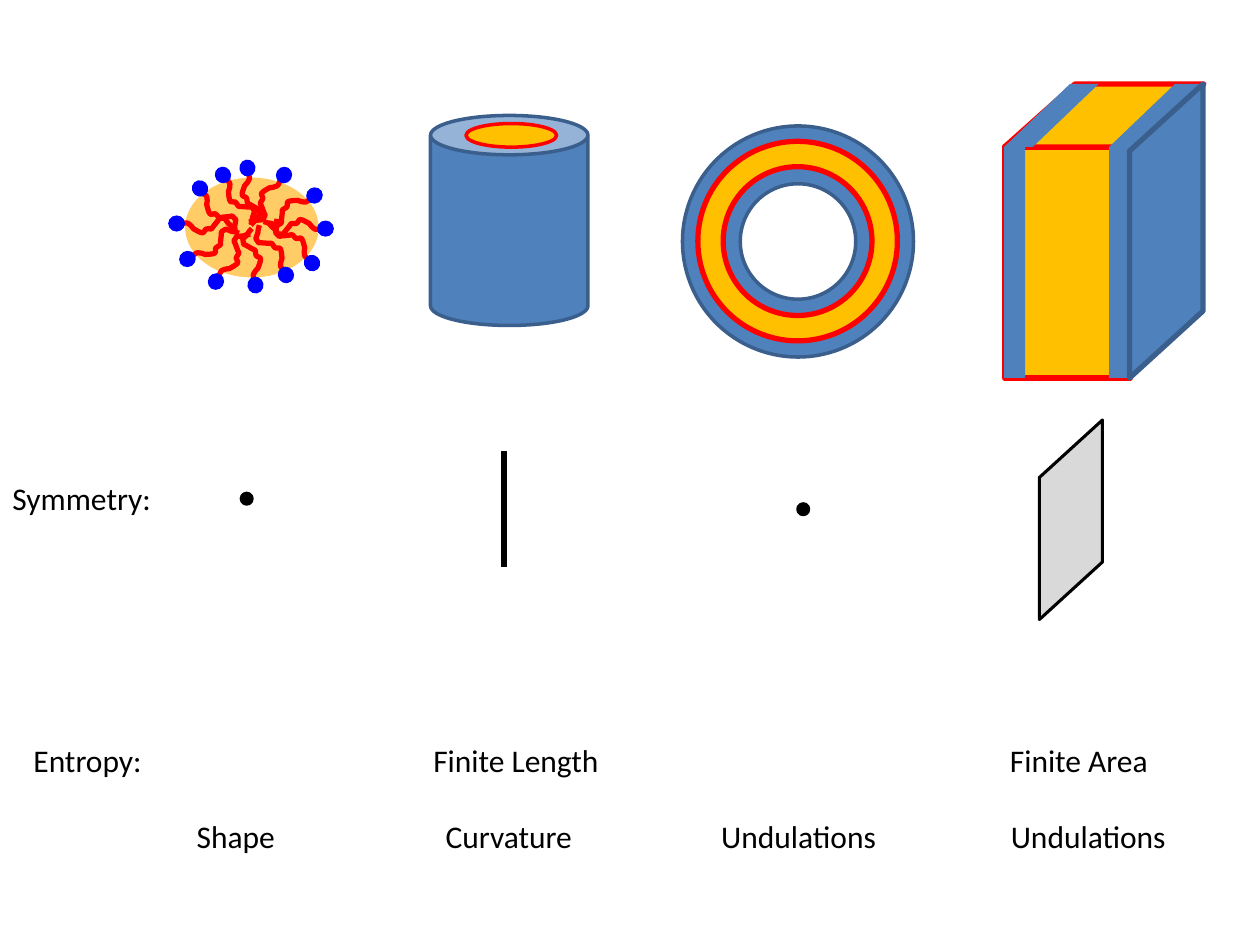
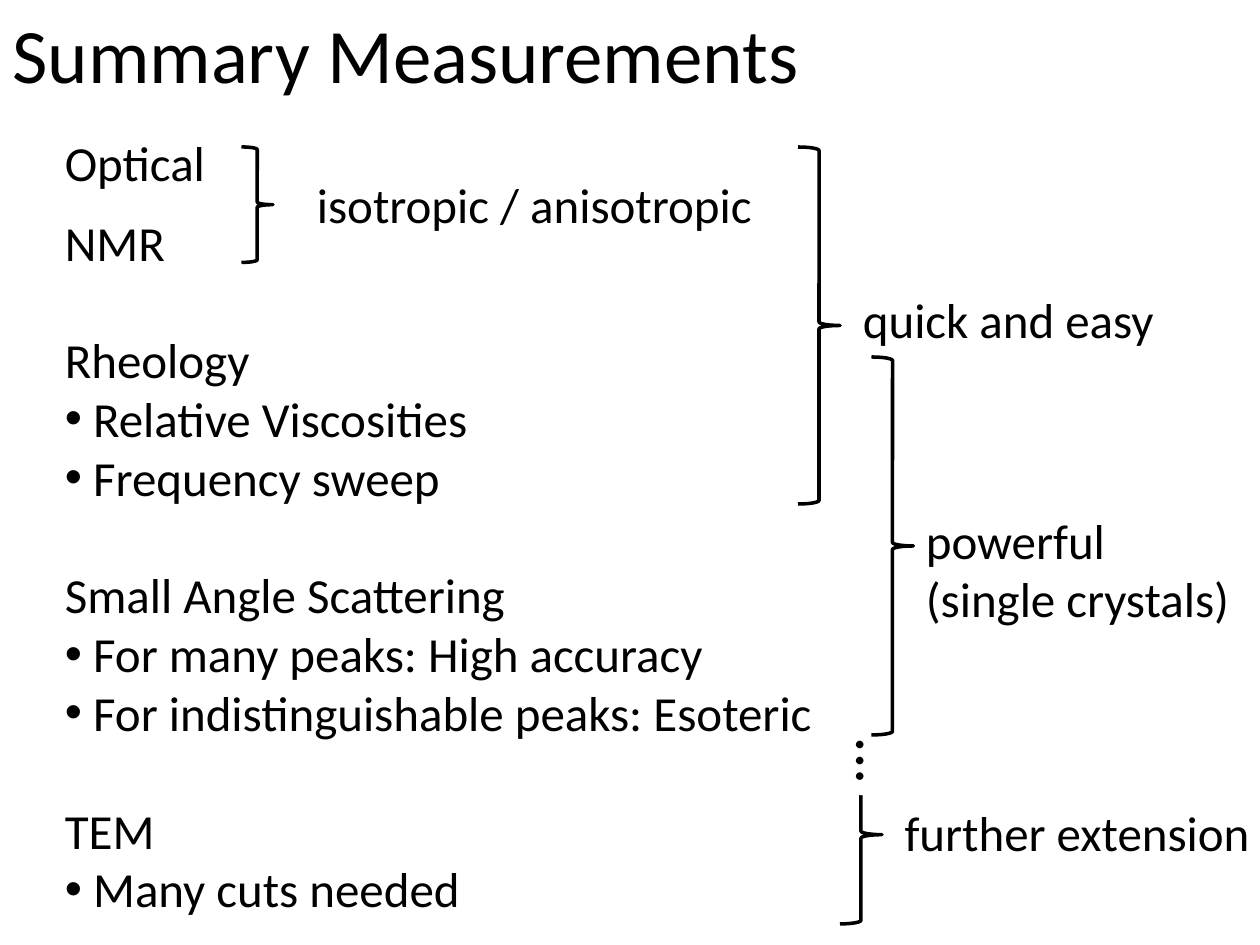
"""Builds two slides: self-assembled phases with their symmetry, and a summary of measurements."""
from lxml import etree
from pptx import Presentation
from pptx.dml.color import RGBColor
from pptx.enum.shapes import MSO_CONNECTOR, MSO_SHAPE
from pptx.enum.text import MSO_AUTO_SIZE
from pptx.oxml.ns import qn
from pptx.util import Pt

ELLIPSE, RECT, PARALLELOGRAM = MSO_SHAPE.OVAL, MSO_SHAPE.RECTANGLE, MSO_SHAPE.PARALLELOGRAM
CAN, DONUT, BRACE = MSO_SHAPE.CAN, MSO_SHAPE.DONUT, MSO_SHAPE.RIGHT_BRACE
STRAIGHT, FIT = MSO_CONNECTOR.STRAIGHT, MSO_AUTO_SIZE.SHAPE_TO_FIT_TEXT

FONT = "Calibri"
BLACK = RGBColor(0x00, 0x00, 0x00)
WHITE = RGBColor(0xFF, 0xFF, 0xFF)
GREY = RGBColor(0xD9, 0xD9, 0xD9)
RED = RGBColor(0xFF, 0x00, 0x00)
HEAD_BLUE = RGBColor(0x00, 0x00, 0xFF)
WATER_BLUE = RGBColor(0x4F, 0x81, 0xBD)
EDGE_BLUE = RGBColor(0x3A, 0x5F, 0x8C)
OIL = RGBColor(0xFF, 0xC0, 0x00)
CORE = RGBColor(0xFF, 0xCC, 0x66)

TAIL_SIZE, HEAD_SIZE = (30.2, 8.3), (9.6, 9.2)
TAIL_START = (0, 4)
TAIL_CURVES = [
    ((2, 4), (5, 3), (6, 4)), ((8, 5), (8, 6), (10, 8)), ((12, 9), (15, 11), (17, 11)),
    ((18, 11), (19, 8), (20, 8)), ((21, 7), (22, 9), (24, 8)), ((25, 6), (29, 2), (30, 0)),
    ((32, 0), (33, 0), (34, 0)), ((35, 1), (36, 3), (37, 4)), ((38, 5), (40, 6), (41, 8)),
]
# angle, centre of the tail, centre of the head
SURFACTANTS = [
    (180, (168.9, 129.6), (186, 130.6)), (148, (164.5, 120.2), (179.7, 111.7)),
    (46, (124.9, 121.3), (114.3, 107.7)), (55.6, (136.5, 114.9), (127.4, 100)),
    (81.1, (142.9, 113.4), (141.4, 96)), (121.1, (151.6, 114.9), (162.3, 100)),
    (0, (118.4, 128.9), (100.9, 127.7)), (328, (122.8, 139.7), (107.1, 148)),
    (226, (167.4, 137.2), (178.3, 150.3)), (235.6, (155.2, 142.2), (163.4, 157.1)),
    (261.1, (144.4, 145.8), (146, 162.9)), (301.1, (133.6, 145.8), (123.4, 160.9)),
]

RED_EDGE, BLUE_EDGE = (RED, 3), (EDGE_BLUE, 2)
SLANT = 1.045
LAMELLA = [
    (RECT, (574, 84, 72, 132), dict(fill=OIL, line=RED_EDGE)),
    (PARALLELOGRAM, (574, 48, 114, 36), dict(fill=OIL, line=RED_EDGE, adjust=1.122)),
    (RECT, (633.8, 84, 12, 132), dict(fill=WATER_BLUE)),
    (RECT, (573.8, 84, 12, 132), dict(fill=WATER_BLUE)),
    (PARALLELOGRAM, (573.8, 48, 54, 36), dict(fill=WATER_BLUE, adjust=SLANT)),
    (PARALLELOGRAM, (633.8, 48, 54, 36), dict(fill=WATER_BLUE, adjust=SLANT)),
    (PARALLELOGRAM, (582.5, 111, 168, 42),
     dict(fill=WATER_BLUE, line=(EDGE_BLUE, 3), adjust=0.912, angle=270, flip=True)),
]
CYLINDER = [
    (CAN, (246, 66, 90, 120), dict(fill=WATER_BLUE, line=BLUE_EDGE)),
    (ELLIPSE, (266.3, 70.6, 51.8, 13.5), dict(fill=OIL, line=(RED, 2))),
]
VESICLE = [
    (DONUT, (390, 72, 132, 132), dict(fill=WATER_BLUE, line=BLUE_EDGE)),
    (DONUT, (398.8, 80.8, 114, 114), dict(fill=OIL, line=RED_EDGE, adjust=0.127)),
]
SYMMETRY_POINTS = [(138, 282), (456, 288)]
SYMMETRY_AXIS = (288, 258, 324)
SYMMETRY_PLANE = (555, 279, 114, 36)
ENTROPY = [
    dict(text="Entropy:\tFinite Length\tFinite Area", tabs=(228.5, 558)),
    dict(text="\tShape\tCurvature\tUndulations\tUndulations", tabs=(93.3, 235.5, 393, 558.5),
         before=21.5),
]

BLOCK_GAP = 33.5
METHODS = [
    dict(text="Optical"),
    dict(text="NMR", before=12.2),
    dict(text="Rheology", before=BLOCK_GAP),
    dict(text="Relative Viscosities", bullet=True),
    dict(text="Frequency sweep", bullet=True),
    dict(text="Small Angle Scattering", before=BLOCK_GAP),
    dict(text="For many peaks: High accuracy", bullet=True),
    dict(text="For indistinguishable peaks: Esoteric", bullet=True),
    dict(text="TEM", before=BLOCK_GAP),
    dict(text="Many cuts needed", bullet=True),
]
VERDICTS = [
    ((138, 84, 18, 66), ["isotropic / anisotropic"], (174, 96, 269.3, 41)),
    ((456, 84, 24, 204), ["quick and easy"], (486, 162, 186.5, 41)),
    ((498, 204, 24, 216), ["powerful", "(single crystals)"], (522, 288, 189.4, 75)),
]
EXTENSION = ((480, 426, 24, 102), ["further extension"], (509.8, 455.3, 218.2, 41))


def add_part(parent, kind, box, fill=None, line=None, adjust=None, angle=0, flip=False):
    part = parent.shapes.add_shape(kind, *map(Pt, box))
    if adjust is not None:
        part.adjustments[0] = adjust
    if flip:
        part.element.spPr.find(qn("a:xfrm")).set("flipH", "1")
    paint(part, fill, line, angle)


def paint(part, fill, line, angle):
    part.shadow.inherit = False
    part.rotation = angle
    if fill is None:
        part.fill.background()
    else:
        part.fill.solid()
        part.fill.fore_color.rgb = fill
    if line is None:
        part.line.fill.background()
    else:
        part.line.color.rgb, part.line.width = line[0], Pt(line[1])


def add_text(parent, paragraphs, box, size=28, wrap=False, fill=None, angle=0, vertical=None):
    label = parent.shapes.add_textbox(*map(Pt, box))
    label.rotation = angle
    if fill is not None:
        label.fill.solid()
        label.fill.fore_color.rgb = fill
    frame = label.text_frame
    frame.word_wrap, frame.auto_size = wrap, FIT
    if vertical:
        label.element.txBody.bodyPr.set("vert", vertical)
    for index, content in enumerate(paragraphs):
        if isinstance(content, str):
            content = dict(text=content)
        paragraph = frame.paragraphs[0] if index == 0 else frame.add_paragraph()
        if "before" in content:
            paragraph.space_before = Pt(content["before"])
        properties = paragraph._p.get_or_add_pPr()
        if content.get("bullet"):
            properties.set("marL", str(Pt(16.2)))
            properties.set("indent", str(-Pt(16.2)))
            etree.SubElement(properties, qn("a:buFont")).set("typeface", "Arial")
            etree.SubElement(properties, qn("a:buChar")).set("char", "•")
        if "tabs" in content:
            stops = etree.SubElement(properties, qn("a:tabLst"))
            for stop in content["tabs"]:
                etree.SubElement(stops, qn("a:tab"), pos=str(Pt(stop)), algn="l")
        run = paragraph.add_run()
        run.text = content["text"]
        run.font.name, run.font.size, run.font.color.rgb = FONT, Pt(size), BLACK


def centred(centre, size):
    return tuple(middle - length / 2 for middle, length in zip(centre, size)) + size


def add_tail(parent, centre, angle):
    builder = parent.shapes.build_freeform(*TAIL_START, scale=Pt(1))
    builder.add_line_segments([curve[-1] for curve in TAIL_CURVES], close=False)
    tail = builder.convert_to_shape()
    for segment, curve in zip(list(tail.element.iter(qn("a:lnTo"))), TAIL_CURVES):
        segment.tag = qn("a:cubicBezTo")
        segment.clear()
        for x, y in curve:
            etree.SubElement(segment, qn("a:pt"), x=str(x), y=str(y))
    tail.left, tail.top, tail.width, tail.height = map(Pt, centred(centre, TAIL_SIZE))
    paint(tail, None, RED_EDGE, angle)


def add_micelle(slide):
    micelle = slide.shapes.add_group_shape()
    add_part(micelle, ELLIPSE, (105.8, 101.5, 76.3, 57), fill=CORE, angle=180)
    for angle, tail_centre, head_centre in SURFACTANTS:
        add_tail(micelle, tail_centre, angle)
        add_part(micelle, ELLIPSE, centred(head_centre, HEAD_SIZE), fill=HEAD_BLUE, angle=angle)


def add_phases(slide):
    add_micelle(slide)
    for phase in (LAMELLA, CYLINDER, VESICLE):
        group = slide.shapes.add_group_shape()
        for kind, box, style in phase:
            add_part(group, kind, box, **style)
    for place in SYMMETRY_POINTS:
        add_part(slide, ELLIPSE, place + (6, 6), fill=BLACK, line=(BLACK, 2))
    x, top, bottom = SYMMETRY_AXIS
    axis = slide.shapes.add_connector(STRAIGHT, Pt(x), Pt(top), Pt(x), Pt(bottom))
    axis.line.color.rgb, axis.line.width = BLACK, Pt(3)
    etree.SubElement(axis.element.spPr, qn("a:effectLst"))
    add_part(slide, PARALLELOGRAM, SYMMETRY_PLANE, fill=GREY, line=(BLACK, 1.75),
             adjust=0.912, angle=270, flip=True)
    add_text(slide, ["Symmetry:"], (0, 270, 94.3, 29), size=18)
    add_text(slide, ENTROPY, (12, 420, 675, 73), size=18, wrap=True)


def add_verdict(parent, brace, words, box):
    add_part(parent, BRACE, brace, line=(BLACK, 2))
    add_text(parent, words, box)


def add_measurements(slide):
    add_text(slide, ["Summary Measurements"], (0, 0, 468.7, 60.5), size=44)
    add_text(slide, METHODS, (30, 72, 446.4, 461))
    for verdict in VERDICTS:
        add_verdict(slide, *verdict)
    extension = slide.shapes.add_group_shape()
    add_verdict(extension, *EXTENSION)
    add_text(extension, ["…"], (453.6, 422, 58.3, 32.4), size=36, fill=WHITE,
             angle=180, vertical="eaVert")


def main():
    deck = Presentation()
    deck.slide_width, deck.slide_height = Pt(720), Pt(540)
    blank = deck.slide_layouts[6]
    for fill_slide in (add_phases, add_measurements):
        fill_slide(deck.slides.add_slide(blank))
    deck.save("out.pptx")


if __name__ == "__main__":
    main()
